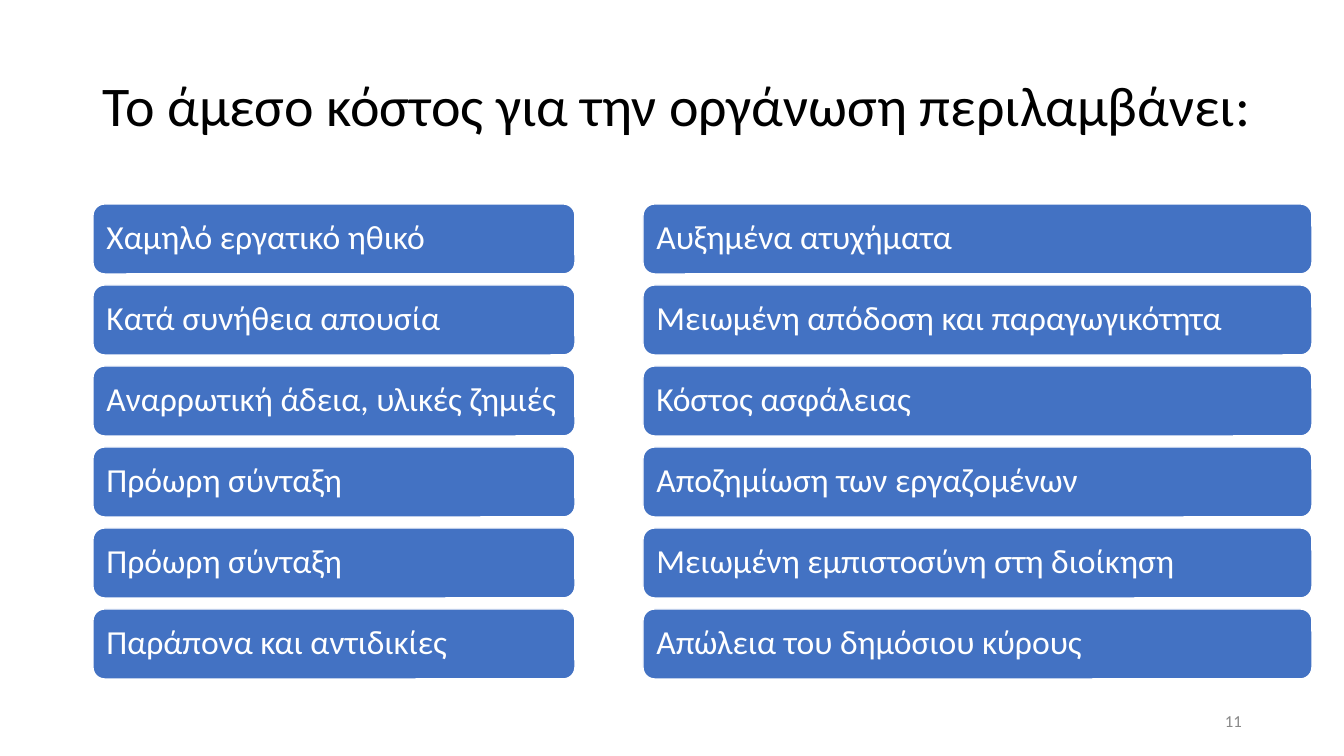
from pptx import Presentation, util as u
from pptx.dml.color import RGBColor
from pptx.enum import shapes, text

PX = 914400 / 100.8
COLORS = {"title": "000000", "card": "4372C3", "white": "FFFFFF", "number": "888888"}


def px(*lengths):
    return [u.Emu(round(n * PX)) for n in lengths]


def write(sp, content, size, color, align=text.PP_ALIGN.LEFT, spacing=0.9, inset_y=5):
    """Fill a shape with one formatted, vertically centred paragraph."""
    tf = sp.text_frame
    tf.word_wrap = True
    tf.vertical_anchor = text.MSO_ANCHOR.MIDDLE
    tf.margin_left, tf.margin_right = px(10, 10)
    tf.margin_top, tf.margin_bottom = px(inset_y, inset_y)
    p = tf.paragraphs[0]
    p.alignment = align
    p.line_spacing = spacing
    r = p.add_run()
    r.text = content
    r.font.name = "Calibri"
    r.font.size = u.Pt(size)
    r.font.color.rgb = RGBColor.from_string(COLORS[color])


prs = Presentation()
prs.slide_width, prs.slide_height = px(1344, 756)
s = prs.slides.add_slide(prs.slide_layouts[6])

title = s.shapes.add_textbox(*px(93, 35, 1175, 146))
write(title, "Το άμεσο κόστος για την οργάνωση περιλαμβάνει:", 40, "title")

# Each column: left edge, width, card texts
columns = [
    (93, 482, [
        "Χαμηλό εργατικό ηθικό",
        "Κατά συνήθεια απουσία",
        "Αναρρωτική άδεια, υλικές ζημιές",
        "Πρόωρη σύνταξη",
        "Πρόωρη σύνταξη",
        "Παράπονα και αντιδικίες",
    ]),
    (643, 669, [
        "Αυξημένα ατυχήματα",
        "Μειωμένη απόδοση και παραγωγικότητα",
        "Κόστος ασφάλειας",
        "Αποζημίωση των εργαζομένων",
        "Μειωμένη εμπιστοσύνη στη διοίκηση",
        "Απώλεια του δημόσιου κύρους",
    ]),
]
CARD_TOP, CARD_HEIGHT, CARD_STEP = 204, 70, 81

for left, width, costs in columns:
    for row, cost in enumerate(costs):
        card = s.shapes.add_shape(
            shapes.MSO_SHAPE.ROUNDED_RECTANGLE,
            *px(left, CARD_TOP + row * CARD_STEP, width, CARD_HEIGHT))
        card.shadow.inherit = False
        card.fill.solid()
        card.fill.fore_color.rgb = RGBColor.from_string(COLORS["card"])
        card.line.color.rgb = RGBColor.from_string(COLORS["white"])
        card.line.width = u.Pt(1)
        write(card, cost, 24, "white", inset_y=10)

number = s.shapes.add_textbox(*px(950, 701, 302, 40))
write(number, "11", 12, "number", align=text.PP_ALIGN.RIGHT, spacing=1.0)

prs.save("out.pptx")
